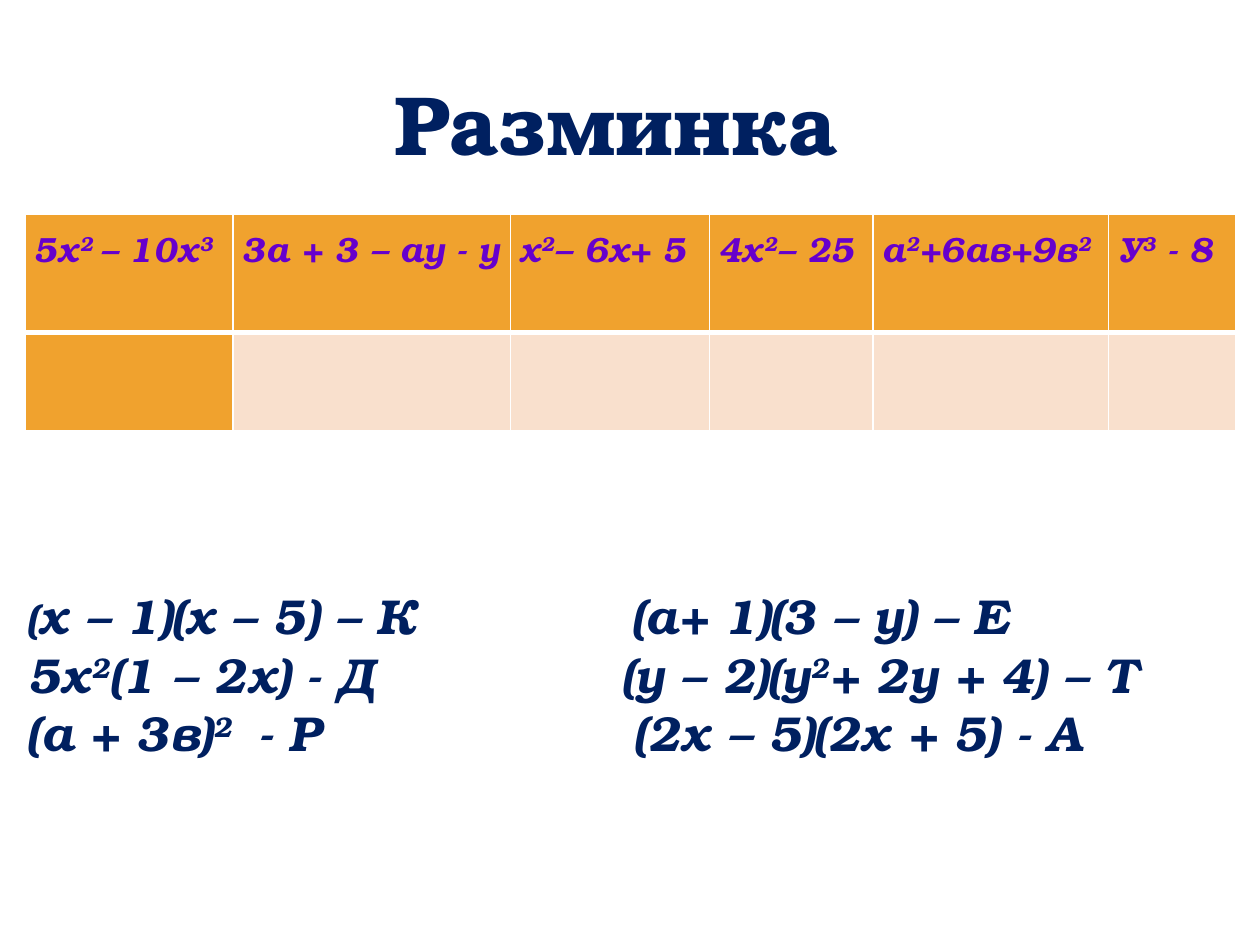
"""Build the warm-up slide: a table of polynomials above their factored forms."""
from lxml.etree import SubElement
from pptx import Presentation
from pptx.dml.color import RGBColor
from pptx.enum.text import MSO_ANCHOR
from pptx.oxml.ns import qn
from pptx.util import Inches, Pt

FONT = "TeX Gyre Bonum"
NAVY, PURPLE, ORANGE, PEACH, WHITE = "002060", "6600CC", "F0A22E", "F9E0CD", "FFFFFF"

TITLE = "Разминка"
POLYNOMIALS = [
    ("5х^2 ^– 10х^3", 1.65),
    ("3а + 3 – ау - у", 2.2),
    ("х^2^– 6х+ 5", 1.58),
    ("4х^2^– 25", 1.3),
    ("а^2^+6ав+9в^2", 1.87),
    ("У^3^ - 8", 1.01),
]
ROW_HEIGHTS = [0.94, 0.78]
ANSWERS = [
    ("(", "х – 1)(х – 5) – К", "(а+ 1)(3 – у) – Е", 4.8),
    ("", "5х^2^(1 – 2х) - Д", "(у – 2)(у^2^+ 2у + 4) – Т", 4.72),
    ("", "(а + 3в)^2 ^ - Р", "(2х – 5)(2х + 5) - А", 4.82),
]


def rgb(value):
    return RGBColor.from_string(value)


def write(para, text, size, color, italic=True):
    """Add text to a paragraph, raising every part between carets."""
    for index, part in enumerate(text.split("^")):
        if not part:
            continue
        span = para.add_run()
        span.text = part
        font = span.font
        font.name, font.size, font.bold, font.italic = FONT, Pt(size), True, italic
        font.color.rgb = rgb(color)
        if index % 2:
            span._r.get_or_add_rPr().set("baseline", "30000")


def add_text_box(page, left, top, width, height, wrap=True):
    box = page.shapes.add_textbox(*map(Inches, (left, top, width, height)))
    box.text_frame.word_wrap = wrap
    return box.text_frame


def add_tab(para, position):
    tabs = SubElement(para._p.get_or_add_pPr(), qn("a:tabLst"))
    SubElement(tabs, qn("a:tab"), pos=str(Inches(position)), algn="l")


def style_cell(cell, color, top, bottom):
    """Set margins, white borders and fill of a table cell."""
    cell.margin_left = cell.margin_right = Inches(0.07)
    cell.margin_top = cell.margin_bottom = 0
    properties = cell._tc.get_or_add_tcPr()
    for side, width in (("L", 1), ("R", 1), ("T", top), ("B", bottom)):
        line = SubElement(properties, qn(f"a:ln{side}"), w=str(Pt(width)))
        fill = SubElement(line, qn("a:solidFill"))
        SubElement(fill, qn("a:srgbClr"), val=WHITE)
    cell.fill.solid()
    cell.fill.fore_color.rgb = rgb(color)


def add_polynomial_table(page):
    widths = [width for _, width in POLYNOMIALS]
    frame = page.shapes.add_table(
        len(ROW_HEIGHTS), len(widths), Inches(0.2), Inches(1.7),
        Inches(sum(widths)), Inches(sum(ROW_HEIGHTS)))
    table = frame.table
    for row, height in zip(table.rows, ROW_HEIGHTS):
        row.height = Inches(height)
    for column, (text, width) in enumerate(POLYNOMIALS):
        table.columns[column].width = Inches(width)
        header, blank = table.cell(0, column), table.cell(1, column)
        style_cell(header, ORANGE, top=1, bottom=3)
        style_cell(blank, PEACH if column else ORANGE, top=3, bottom=1)
        para = header.text_frame.paragraphs[0]
        para.line_spacing = 1.15
        write(para, text, 20, PURPLE)


def add_answers(page):
    frame = add_text_box(page, 0.12, 4.59, 9.37, 1.51)
    frame.vertical_anchor = MSO_ANCHOR.MIDDLE
    for index, (opening, left, right, stop) in enumerate(ANSWERS):
        para = frame.add_paragraph() if index else frame.paragraphs[0]
        add_tab(para, stop)
        write(para, opening, 24, NAVY)
        write(para, left, 28, NAVY)
        write(para, "\t" + right, 28, NAVY)


def main():
    deck = Presentation()
    deck.slide_width, deck.slide_height = Inches(10), Inches(7.5)
    page = deck.slides.add_slide(deck.slide_layouts[6])
    add_polynomial_table(page)
    add_answers(page)
    title = add_text_box(page, 3.03, 0.52, 3.76, 0.91, wrap=False)
    write(title.paragraphs[0], TITLE, 48, NAVY, italic=False)
    deck.save("out.pptx")


if __name__ == "__main__":
    main()
